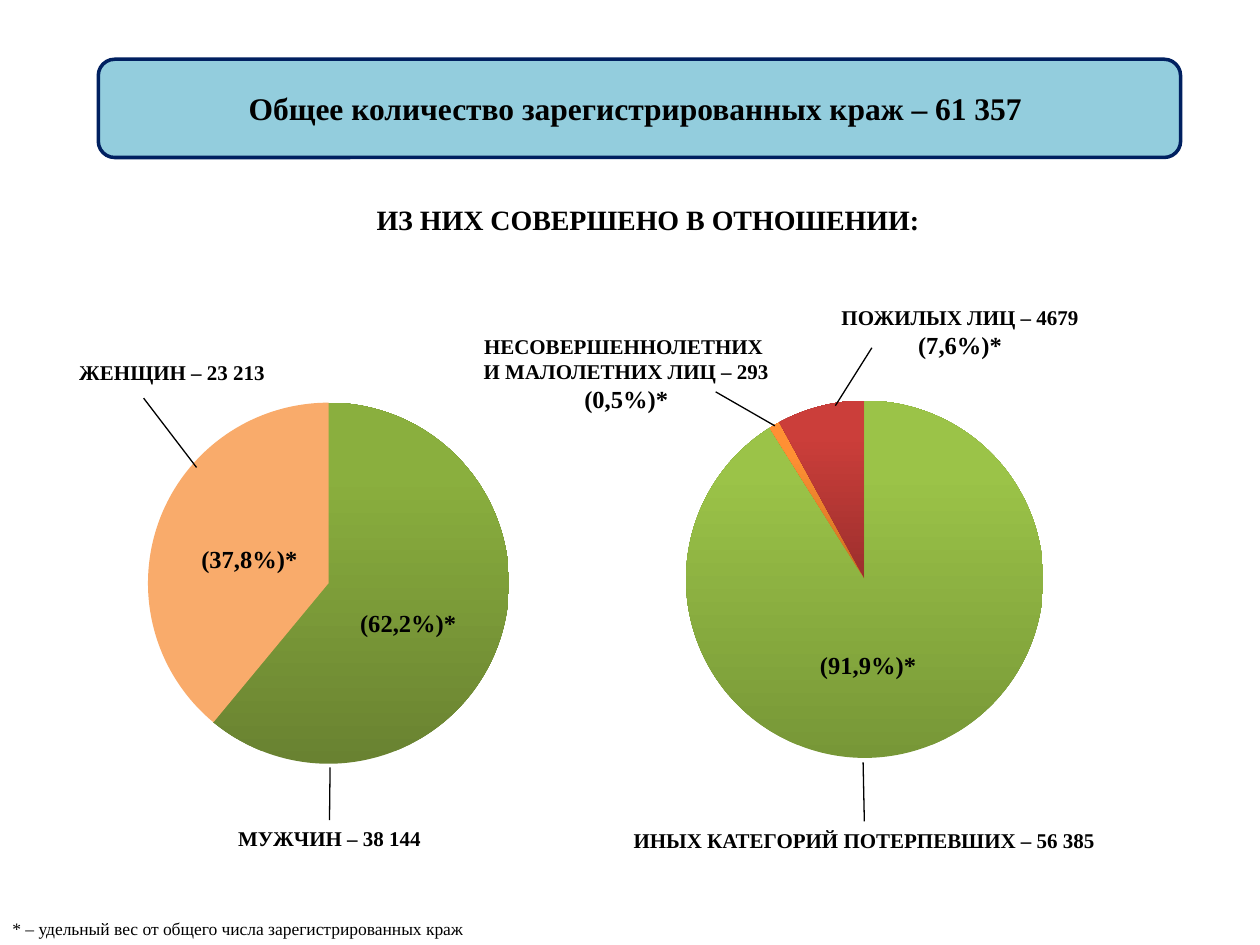
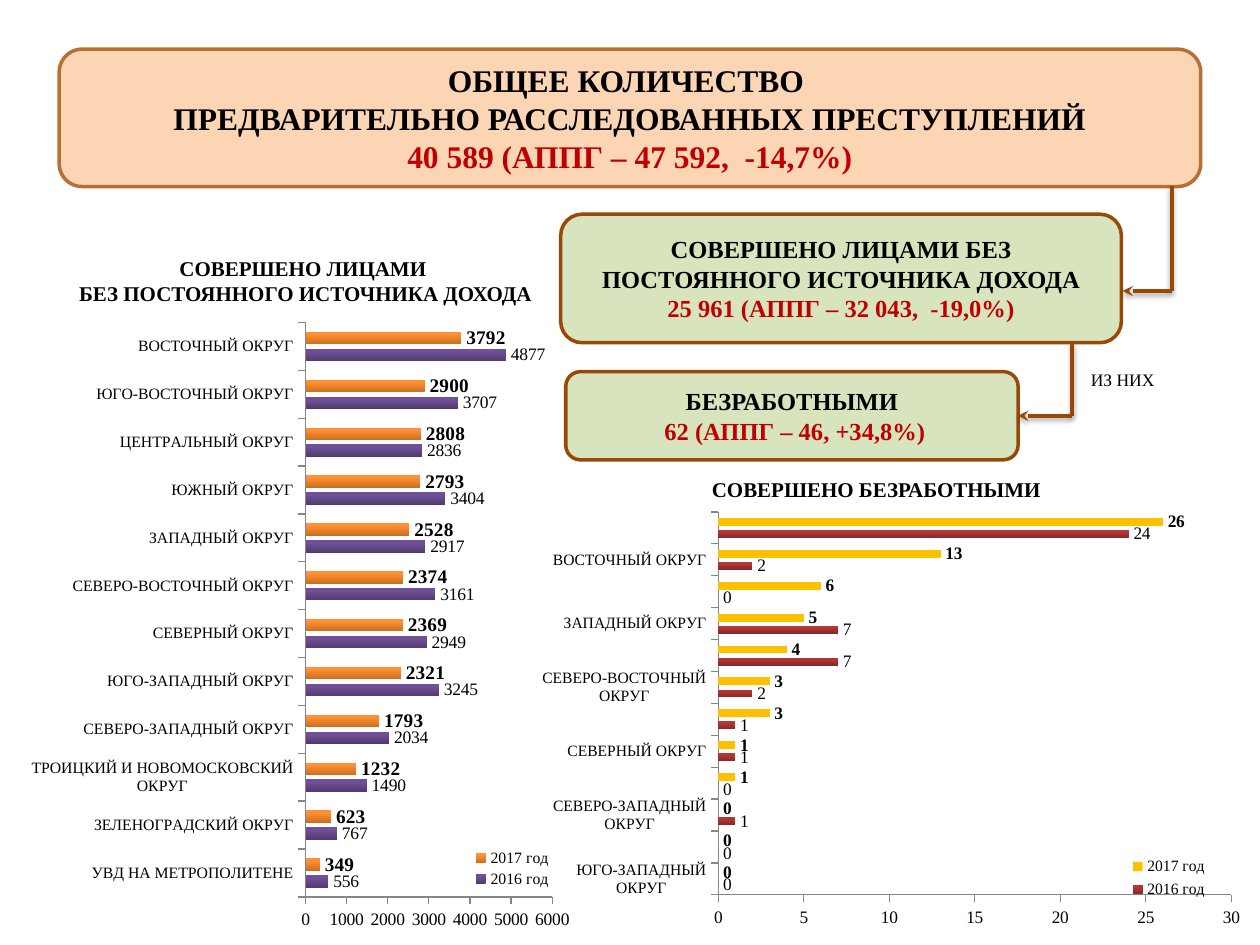
import pptx
import pptx.util
import pptx.chart.data
import pptx.dml.color
import pptx.enum.chart
import pptx.enum.shapes
import pptx.enum.text
import pptx.oxml
import pptx.oxml.ns

Inches = pptx.util.Inches
Pt = pptx.util.Pt
RGBColor = pptx.dml.color.RGBColor
qn = pptx.oxml.ns.qn
ChartType = pptx.enum.chart.XL_CHART_TYPE
Align = pptx.enum.text.PP_ALIGN
Anchor = pptx.enum.text.MSO_ANCHOR

BLACK = RGBColor(0x00, 0x00, 0x00)
CRIMSON = RGBColor(0xC0, 0x00, 0x00)
SKY = RGBColor(0x93, 0xCD, 0xDD)
NAVY = RGBColor(0x00, 0x20, 0x60)
PEACH = RGBColor(0xFC, 0xD5, 0xB5)
COPPER = RGBColor(0xB7, 0x6F, 0x34)
SAGE = RGBColor(0xD7, 0xE4, 0xBD)
BROWN = RGBColor(0x98, 0x48, 0x07)
AXIS_GRAY = RGBColor(0x86, 0x86, 0x86)
APRICOT = (RGBColor(0xF9, 0xAB, 0x6B),)
GOLD = (RGBColor(0xFF, 0xC0, 0x00),)
OLIVE = (RGBColor(0x69, 0x82, 0x31), RGBColor(0x8A, 0xAF, 0x3E))
GREEN = (RGBColor(0x77, 0x97, 0x37), RGBColor(0x9B, 0xC3, 0x48))
ORANGE = (RGBColor(0xCC, 0x6E, 0x20), RGBColor(0xFF, 0x90, 0x34))
RED = (RGBColor(0x9C, 0x2F, 0x2D), RGBColor(0xCB, 0x3E, 0x3A))
DARK_RED = (RGBColor(0x8A, 0x26, 0x24), RGBColor(0xB4, 0x38, 0x35))
PURPLE = (RGBColor(0x52, 0x3A, 0x70), RGBColor(0x70, 0x51, 0x97))

SERIF = "Times New Roman"
A_NS = 'xmlns:a="http://schemas.openxmlformats.org/drawingml/2006/main"'
C_NS = 'xmlns:c="http://schemas.openxmlformats.org/drawingml/2006/chart"'
SOFT_SHADOW = (
    '<a:outerShdw blurRad="39370" dist="20320" dir="5400000" rotWithShape="0">'
    '<a:srgbClr val="000000"><a:alpha val="38000"/></a:srgbClr></a:outerShdw>'
)


def write_lines(shape, lines, size, bold=True, align=Align.CENTER, anchor=Anchor.TOP, wrap=True):
    frame = shape.text_frame
    frame.word_wrap = wrap
    frame.vertical_anchor = anchor
    for index, (words, changes) in enumerate(lines):
        paragraph = frame.paragraphs[0] if index == 0 else frame.add_paragraph()
        paragraph.alignment = align
        run = paragraph.add_run()
        run.text = words
        run.font.color.rgb = changes.get("color", BLACK)
        look = {"name": SERIF, "size": Pt(changes.get("size", size)), "bold": bold}
        for key, value in look.items():
            setattr(run.font, key, value)


def draw_line(slide, ends, color, width, effects="", head=False):
    line = slide.shapes.add_connector(
        pptx.enum.shapes.MSO_CONNECTOR.STRAIGHT, *[Inches(value) for value in ends]
    )
    line.line.color.rgb = color
    line.line.width = Pt(width)
    if head:
        line.line._get_or_add_ln().append(pptx.oxml.parse_xml(f'<a:tailEnd {A_NS} type="stealth"/>'))
    line._element.spPr.append(pptx.oxml.parse_xml(f"<a:effectLst {A_NS}>{effects}</a:effectLst>"))
    return line


deck = pptx.Presentation()
deck.slide_width, deck.slide_height = Inches(10), Inches(7.5)
victims, offenders = [deck.slides.add_slide(deck.slide_layouts[6]) for _ in range(2)]
charts = []
layouts = []
fills = []

pies = [
    ((0.42, 3.07, 4.42, 3.15), (0.17, 0.04, 0.65, 0.91), (61, 39), (OLIVE, APRICOT)),
    ((4.2, 2.25, 5.38, 4.65), (0.23, 0.2, 0.53, 0.61), (92, 1, 8), (GREEN, ORANGE, RED)),
]
for place, plot_area, shares, colors in pies:
    data = pptx.chart.data.CategoryChartData()
    data.categories = [str(number + 1) for number in range(len(shares))]
    data.add_series("Series 1", shares)
    pie = victims.shapes.add_chart(ChartType.PIE, *[Inches(v) for v in place], data).chart
    pie.has_legend = False
    pie.plots[0].vary_by_categories = True
    for index, color in enumerate(colors):
        fills.append((pie.plots[0].series[0].points[index].format, color))
    charts.append((pie, plot_area))

METRO, ZELENOGRAD, TROITSK = "УВД НА МЕТРОПОЛИТЕНЕ", "ЗЕЛЕНОГРАДСКИЙ ОКРУГ", "ТРОИЦКИЙ И НОВОМОСКОВСКИЙ ОКРУГ"
NW, SW, NORTH = "СЕВЕРО-ЗАПАДНЫЙ ОКРУГ", "ЮГО-ЗАПАДНЫЙ ОКРУГ", "СЕВЕРНЫЙ ОКРУГ"
NE, WEST, SOUTH = "СЕВЕРО-ВОСТОЧНЫЙ ОКРУГ", "ЗАПАДНЫЙ ОКРУГ", "ЮЖНЫЙ ОКРУГ"
CENTER, SE, EAST = "ЦЕНТРАЛЬНЫЙ ОКРУГ", "ЮГО-ВОСТОЧНЫЙ ОКРУГ", "ВОСТОЧНЫЙ ОКРУГ"

district_bars = [
    {
        "place": (4.27, 4.03, 5.57, 3.34), "plot": (0.26, 0.01, 0.74, 0.91),
        "legend": (0.84, 0.82, 0.14, 0.12), "overlap": -53, "max": 30, "step": 5, "bold_size": 10,
        "districts": (SW, METRO, NW, CENTER, NORTH, SE, NE, SOUTH, WEST, ZELENOGRAD, EAST, TROITSK),
        "2016 год": (0, 0, 1, 0, 1, 1, 2, 7, 7, 0, 2, 24),
        "2017 год": (0, 0, 0, 1, 1, 3, 3, 4, 5, 6, 13, 26),
        "colors": (DARK_RED, GOLD),
    },
    {
        "place": (0.15, 2.41, 5.76, 5.01), "plot": (0.395, 0.03, 0.34, 0.91),
        "legend": (0.61, 0.86, 0.14, 0.07), "overlap": -36, "max": 6000, "step": 1000, "bold_size": 11,
        "districts": (METRO, ZELENOGRAD, TROITSK, NW, SW, NORTH, NE, WEST, SOUTH, CENTER, SE, EAST),
        "2016 год": (556, 767, 1490, 2034, 3245, 2949, 3161, 2917, 3404, 2836, 3707, 4877),
        "2017 год": (349, 623, 1232, 1793, 2321, 2369, 2374, 2528, 2793, 2808, 2900, 3792),
        "colors": (PURPLE, ORANGE),
    },
]
for block in district_bars:
    data = pptx.chart.data.CategoryChartData()
    data.categories = block["districts"]
    for year in ("2016 год", "2017 год"):
        data.add_series(year, block[year])
    bars = offenders.shapes.add_chart(
        ChartType.BAR_CLUSTERED, *[Inches(v) for v in block["place"]], data
    ).chart
    plot = bars.plots[0]
    for key, value in {"gap_width": 150, "overlap": block["overlap"], "vary_by_categories": False}.items():
        setattr(plot, key, value)
    for series, color, size, bold in zip(plot.series, block["colors"], (10, block["bold_size"]), (False, True)):
        fills.append((series.format, color))
        labels = series.data_labels
        labels.show_value = True
        labels.position = pptx.enum.chart.XL_LABEL_POSITION.OUTSIDE_END
        for key, value in {"name": SERIF, "size": Pt(size), "bold": bold}.items():
            setattr(labels.font, key, value)
    for axis, size in ((bars.category_axis, 9), (bars.value_axis, 10)):
        axis.has_major_gridlines = False
        axis.major_tick_mark = pptx.enum.chart.XL_TICK_MARK.OUTSIDE
        axis.format.line.color.rgb = AXIS_GRAY
        axis.tick_labels.font.name = SERIF
        axis.tick_labels.font.size = Pt(size)
    scale = {"minimum_scale": 0, "maximum_scale": block["max"], "major_unit": block["step"]}
    for key, value in scale.items():
        setattr(bars.value_axis, key, value)
    bars.has_legend = True
    legend = bars.legend
    legend.position = pptx.enum.chart.XL_LEGEND_POSITION.RIGHT
    legend.include_in_layout = False
    legend.font.name = SERIF
    legend.font.size = Pt(9)
    layouts.append((legend._element, 1, block["legend"], ""))
    charts.append((bars, block["plot"]))

for chart, plot_area in charts:
    chart.has_title = False
    chart.font.name = "Calibri"
    chart.font.size = Pt(10)
    chart.font.color.rgb = BLACK
    chart.element.find(qn("c:chart")).addnext(pptx.oxml.parse_xml(
        f"<c:spPr {C_NS} {A_NS}><a:noFill/><a:ln><a:noFill/></a:ln></c:spPr>"
    ))
    area = chart.element.find(".//" + qn("c:plotArea"))
    layouts.append((area, 0, plot_area, '<c:layoutTarget val="inner"/>'))

for parent, position, box, target in layouts:
    for old in parent.findall(qn("c:layout")):
        parent.remove(old)
    modes = "".join(f'<c:{side}Mode val="edge"/>' for side in "xy")
    sizes = "".join(f'<c:{side} val="{value}"/>' for side, value in zip("xywh", box))
    parent.insert(position, pptx.oxml.parse_xml(
        f"<c:layout {C_NS}><c:manualLayout>{target}{modes}{sizes}</c:manualLayout></c:layout>"
    ))

for part, colors in fills:
    part.line.fill.background()
    if len(colors) == 1:
        part.fill.solid()
        part.fill.fore_color.rgb = colors[0]
        continue
    part.fill.gradient()
    part.fill.gradient_angle = 90
    for stop, color, position in zip(part.fill.gradient_stops, colors, (0, 0.8)):
        stop.color.rgb = color
        stop.position = position

red_line = {"color": CRIMSON}
banners = [
    (victims, (0.78, 0.47, 8.59, 0.78), SKY, NAVY, 18,
     [("Общее количество зарегистрированных краж – 61 357 ", {})]),
    (offenders, (0.47, 0.39, 9.06, 1.09), PEACH, COPPER, 18,
     [("ОБЩЕЕ КОЛИЧЕСТВО ", {}), ("ПРЕДВАРИТЕЛЬНО РАССЛЕДОВАННЫХ ПРЕСТУПЛЕНИЙ", {}),
      ("40 589 (АППГ – 47 592,  -14,7%)", red_line)]),
    (offenders, (4.45, 1.7, 4.45, 1.02), SAGE, BROWN, 14,
     [("СОВЕРШЕНО ЛИЦАМИ БЕЗ ПОСТОЯННОГО ИСТОЧНИКА ДОХОДА", {}),
      ("25 961 (АППГ – 32 043,  -19,0%)", red_line)]),
    (offenders, (4.49, 2.95, 3.59, 0.7), SAGE, BROWN, 14,
     [("БЕЗРАБОТНЫМИ", {}), (" 62 (АППГ – 46, +34,8%)", red_line)]),
]
for slide, place, fill, edge, size, lines in banners:
    banner = slide.shapes.add_shape(
        pptx.enum.shapes.MSO_SHAPE.ROUNDED_RECTANGLE, *[Inches(v) for v in place]
    )
    banner.shadow.inherit = False
    banner.fill.solid()
    banner.fill.fore_color.rgb = fill
    banner.line.color.rgb = edge
    banner.line.width = Pt(2)
    write_lines(banner, lines, size, anchor=Anchor.MIDDLE)
unemployed_banner = banner

plain = {"bold": False, "align": Align.LEFT}
middle = {"anchor": Anchor.MIDDLE}
large = {"size": 14}
captions = [
    (victims, (2.89, 1.56, 4.57, 0.37), 16, [("ИЗ НИХ СОВЕРШЕНО В ОТНОШЕНИИ:", {})],
     {"align": Align.LEFT, "wrap": False}),
    (victims, (0, 7.24, 3.98, 0.26), 10,
     [("* – удельный вес от общего числа зарегистрированных краж", {})], plain),
    (victims, (6.57, 2.37, 2.1, 0.54), 12, [("ПОЖИЛЫХ ЛИЦ – 4679", {}), ("(7,6%)*", large)], {}),
    (victims, (3.73, 2.6, 2.48, 0.71), 12,
     [("НЕСОВЕРШЕННОЛЕТНИХ ", {}), ("И МАЛОЛЕТНИХ ЛИЦ – 293", {}), ("(0,5%)*", large)], {}),
    (victims, (2.72, 4.75, 1.04, 0.39), 14, [("(62,2%)*", {})], middle),
    (victims, (1.46, 4.24, 1.04, 0.39), 14, [("(37,8%)*", {})], middle),
    (victims, (6.37, 5.08, 1.04, 0.39), 14, [("(91,9%)*", {})], middle),
    (victims, (0.47, 2.81, 1.79, 0.29), 12, [("ЖЕНЩИН – 23 213", {})], middle),
    (victims, (1.78, 6.51, 1.67, 0.29), 12, [("МУЖЧИН – 38 144", {})], middle),
    (victims, (4.73, 6.52, 4.26, 0.29), 12, [("ИНЫХ КАТЕГОРИЙ ПОТЕРПЕВШИХ – 56 385", {})], middle),
    (offenders, (8.56, 2.88, 0.74, 0.27), 10, [("ИЗ НИХ", {})], plain),
    (offenders, (0.47, 1.98, 3.91, 0.51), 12,
     [("СОВЕРШЕНО ЛИЦАМИ ", {}), ("БЕЗ ПОСТОЯННОГО ИСТОЧНИКА ДОХОДА", {})], {}),
    (offenders, (4.38, 3.73, 5.15, 0.3), 12, [("СОВЕРШЕНО БЕЗРАБОТНЫМИ", {})], {}),
]
caption_boxes = {}
for slide, place, size, lines, options in captions:
    caption = slide.shapes.add_textbox(*[Inches(v) for v in place])
    write_lines(caption, lines, size, **options)
    caption_boxes[lines[0][0]] = caption

leaders = [
    ((6.63, 3.22, 6.92, 2.76), None),
    ((5.68, 3.11, 6.15, 3.38), None),
    ((1.14, 3.16, 1.56, 3.71), None),
    ((2.62, 6.09, 2.62, 6.51), "МУЖЧИН – 38 144"),
    ((6.85, 6.05, 6.86, 6.52), "ИНЫХ КАТЕГОРИЙ ПОТЕРПЕВШИХ – 56 385"),
]
for ends, caption_key in leaders:
    leader = draw_line(victims, ends, BLACK, 0.75)
    if caption_key:
        leader.end_connect(caption_boxes[caption_key], 0)

for x, top, bottom, tip in ((9.3, 1.48, 2.31, 8.91), (8.51, 2.72, 3.3, 8.08)):
    draw_line(offenders, (x, top, x, bottom), BROWN, 2, SOFT_SHADOW)
    arrow = draw_line(offenders, (x, bottom, tip, bottom), BROWN, 2, SOFT_SHADOW, head=True)
arrow.end_connect(unemployed_banner, 3)

deck.save("out.pptx")
